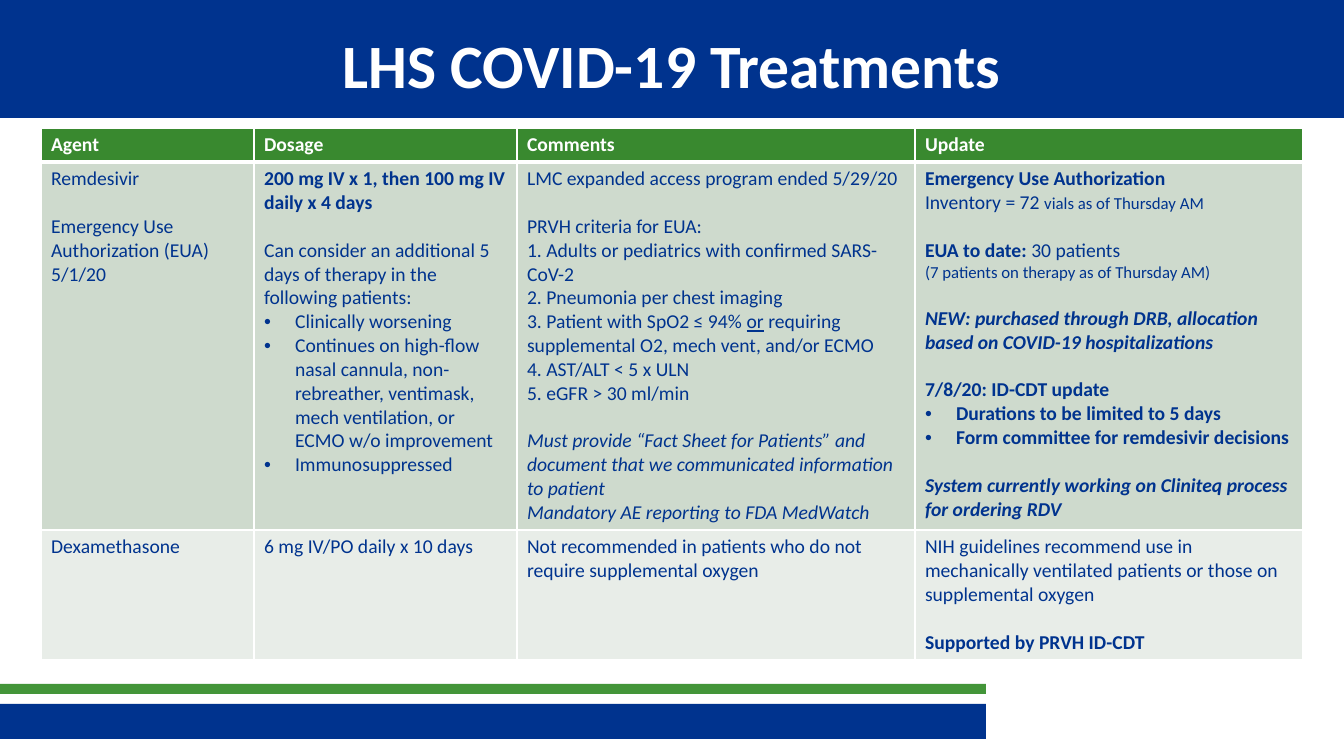
"""Build the COVID-19 treatments slide."""
from lxml.etree import SubElement
from pptx import Presentation
from pptx.dml.color import RGBColor
from pptx.enum.shapes import MSO_SHAPE
from pptx.enum.text import MSO_ANCHOR, PP_ALIGN
from pptx.oxml.ns import qn
from pptx.util import Pt

NAVY = RGBColor(0x00, 0x33, 0x8E)
GREEN = RGBColor(0x43, 0x95, 0x39)
HEADER_GREEN = RGBColor(0x39, 0x89, 0x2F)
SAGE = RGBColor(0xCE, 0xDA, 0xCD)
PALE_SAGE = RGBColor(0xE8, 0xED, 0xE8)
WHITE = RGBColor(0xFF, 0xFF, 0xFF)
FONT = "Calibri"
PX = 12192000 / 1344

TITLE = "LHS COVID-19 Treatments"
TITLE_BOX = (67, 17, 1210, 93)
BARS = [
    (-3, 704, 989, 35, NAVY),
    (-3, 684, 989, 10, GREEN),
    (0, 0, 1344, 118, NAVY),
]
TABLE_AT = (41, 128)
COLUMNS = [213, 263, 398, 388]
ROWS = [(33, HEADER_GREEN, WHITE), (368, SAGE, NAVY), (129, PALE_SAGE, NAVY)]

# Paragraph: (lead, (text, marks), ...); marks: b bold, i italic, u underline, s small.
CELLS = [
    [[("", (name, "b"))] for name in ("Agent", "Dosage", "Comments", "Update")],
    [
        [
            ("", ("Remdesivir", "")),
            ("gap", ("Emergency Use Authorization (EUA) 5/1/20", "")),
        ],
        [
            ("", ("200 mg IV x 1, then 100 mg IV daily x 4 days", "b")),
            ("gap", ("Can consider an additional 5 days of therapy in the following patients:", "")),
            ("bullet", ("Clinically worsening", "")),
            ("bullet", ("Continues on high-flow nasal cannula, non-rebreather, ventimask, "
                        "mech ventilation, or ECMO w/o improvement", "")),
            ("bullet", ("Immunosuppressed", "")),
        ],
        [
            ("", ("LMC expanded access program ended 5/29/20", "")),
            ("gap", ("PRVH criteria for EUA:", "")),
            ("", ("1. Adults or pediatrics with confirmed SARS-CoV-2", "")),
            ("", ("2. Pneumonia per chest imaging", "")),
            ("", ("3. Patient with SpO2 ≤ 94% ", ""), ("or", "u"),
             (" requiring supplemental O2, mech vent, and/or ECMO", "")),
            ("", ("4. AST/ALT < 5 x ULN", "")),
            ("", ("5. eGFR > 30 ml/min", "")),
            ("gap", ("Must provide “Fact Sheet for Patients” and document that "
                     "we communicated information to patient", "i")),
            ("", ("Mandatory AE reporting to FDA MedWatch", "i")),
        ],
        [
            ("", ("Emergency Use Authorization", "b")),
            ("", ("Inventory = 72 ", ""), ("vials as of Thursday AM", "s")),
            ("gap", ("EUA to date: ", "b"), ("30 patients", "")),
            ("", ("(7 patients on therapy as of Thursday AM)", "s")),
            ("gap", ("NEW: purchased through DRB, allocation based on "
                     "COVID-19 hospitalizations", "bi")),
            ("gap", ("7/8/20: ID-CDT update", "b")),
            ("bullet", ("Durations to be limited to 5 days", "b")),
            ("bullet", ("Form committee for remdesivir decisions", "b")),
            ("gap", ("System currently working on Cliniteq process for ordering RDV", "bi")),
        ],
    ],
    [
        [("", ("Dexamethasone", ""))],
        [("", ("6 mg IV/PO daily x 10 days", ""))],
        [("", ("Not recommended in patients who do not require supplemental oxygen", ""))],
        [
            ("", ("NIH guidelines recommend use in mechanically ventilated patients "
                  "or those on supplemental oxygen", "")),
            ("gap", ("Supported by PRVH ID-CDT", "b")),
        ],
    ],
]


def px(*lengths):
    return [round(n * PX) for n in lengths]


def add_run(p, text, marks, size, color):
    r = p.add_run()
    r.text = text
    r.font.name, r.font.size = FONT, Pt(size)
    r.font.bold, r.font.italic = "b" in marks, "i" in marks
    r.font.underline = "u" in marks
    r.font.color.rgb = color


def add_bullet(p):
    pPr = p._p.get_or_add_pPr()
    indent = px(31)[0]
    pPr.set("marL", str(indent))
    pPr.set("indent", str(-indent))
    SubElement(pPr, qn("a:buFont"), typeface="Arial")
    SubElement(pPr, qn("a:buChar"), char="•")


def add_borders(cell, widths):
    tcPr = cell._tc.get_or_add_tcPr()
    for side, width in zip("LRTB", widths):
        ln = SubElement(tcPr, qn(f"a:ln{side}"), w=str(Pt(width)))
        fill = SubElement(ln, qn("a:solidFill"))
        SubElement(fill, qn("a:srgbClr"), val=str(WHITE))


def fill_cell(cell, paragraphs, color):
    tf = cell.text_frame
    for k, (lead, *runs) in enumerate(paragraphs):
        p = tf.add_paragraph() if k else tf.paragraphs[0]
        if lead == "bullet":
            add_bullet(p)
        elif lead == "gap":
            p.space_before = Pt(17)
        for text, marks in runs:
            add_run(p, text, marks, 12 if "s" in marks else 14, color)


def add_bars(s):
    for *box, color in BARS:
        sp = s.shapes.add_shape(MSO_SHAPE.RECTANGLE, *px(*box))
        sp.shadow.inherit = False
        sp.fill.solid()
        sp.fill.fore_color.rgb = color
        sp.line.fill.background()


def add_title(s):
    title = s.shapes.title
    title.element.getparent().append(title.element)
    title.left, title.top, title.width, title.height = px(*TITLE_BOX)
    tf = title.text_frame
    tf.word_wrap = True
    tf.vertical_anchor = MSO_ANCHOR.MIDDLE
    p = tf.paragraphs[0]
    p.alignment = PP_ALIGN.CENTER
    add_run(p, TITLE, "b", 44, WHITE)


def add_treatments(s):
    size = (sum(COLUMNS), sum(height for height, *_ in ROWS))
    table = s.shapes.add_table(len(ROWS), len(COLUMNS), *px(*TABLE_AT, *size)).table
    for column, width in zip(table.columns, px(*COLUMNS)):
        column.width = width
    for i, (height, fill, color) in enumerate(ROWS):
        table.rows[i].height = px(height)[0]
        for j, paragraphs in enumerate(CELLS[i]):
            cell = table.cell(i, j)
            add_borders(cell, (1, 1, 3 if i == 1 else 1, 3 if i == 0 else 1))
            cell.fill.solid()
            cell.fill.fore_color.rgb = fill
            fill_cell(cell, paragraphs, color)


def main():
    prs = Presentation()
    prs.slide_width, prs.slide_height = px(1344, 756)
    s = prs.slides.add_slide(prs.slide_layouts[5])
    add_bars(s)
    add_title(s)
    add_treatments(s)
    prs.save("out.pptx")


if __name__ == "__main__":
    main()
